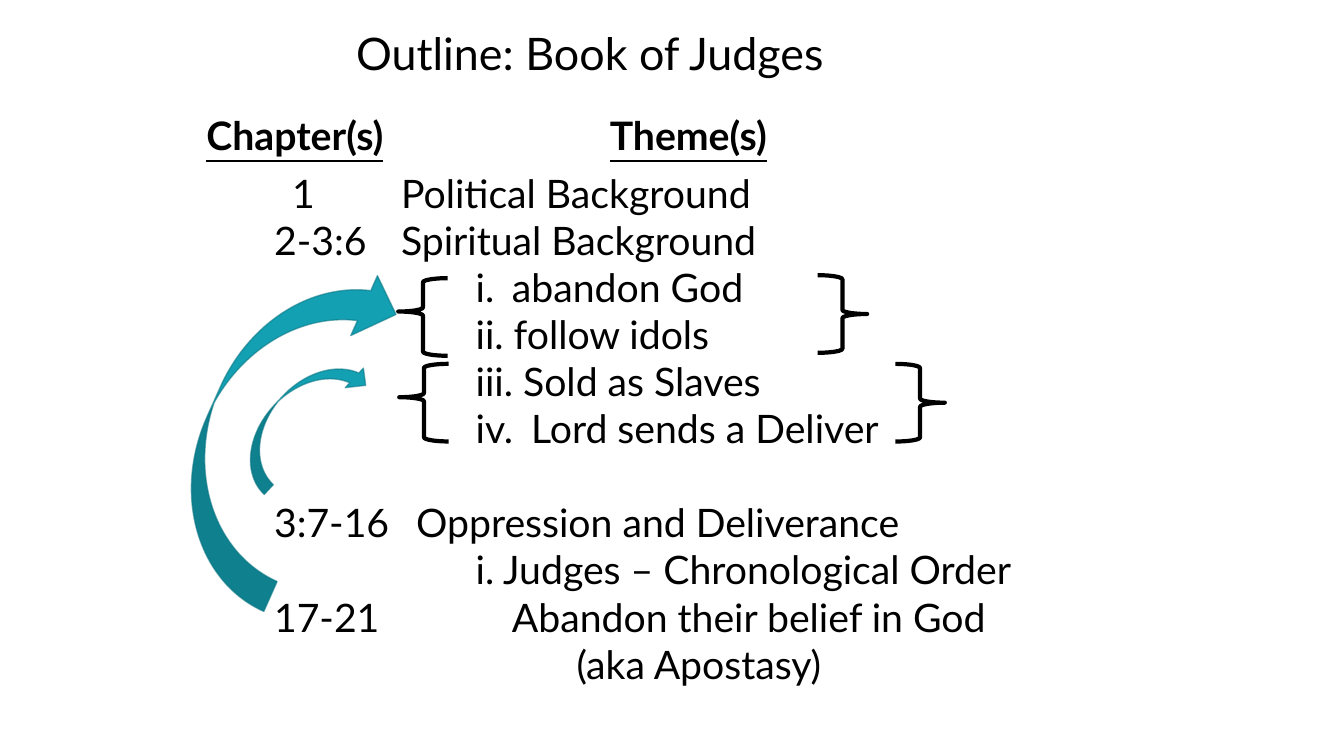
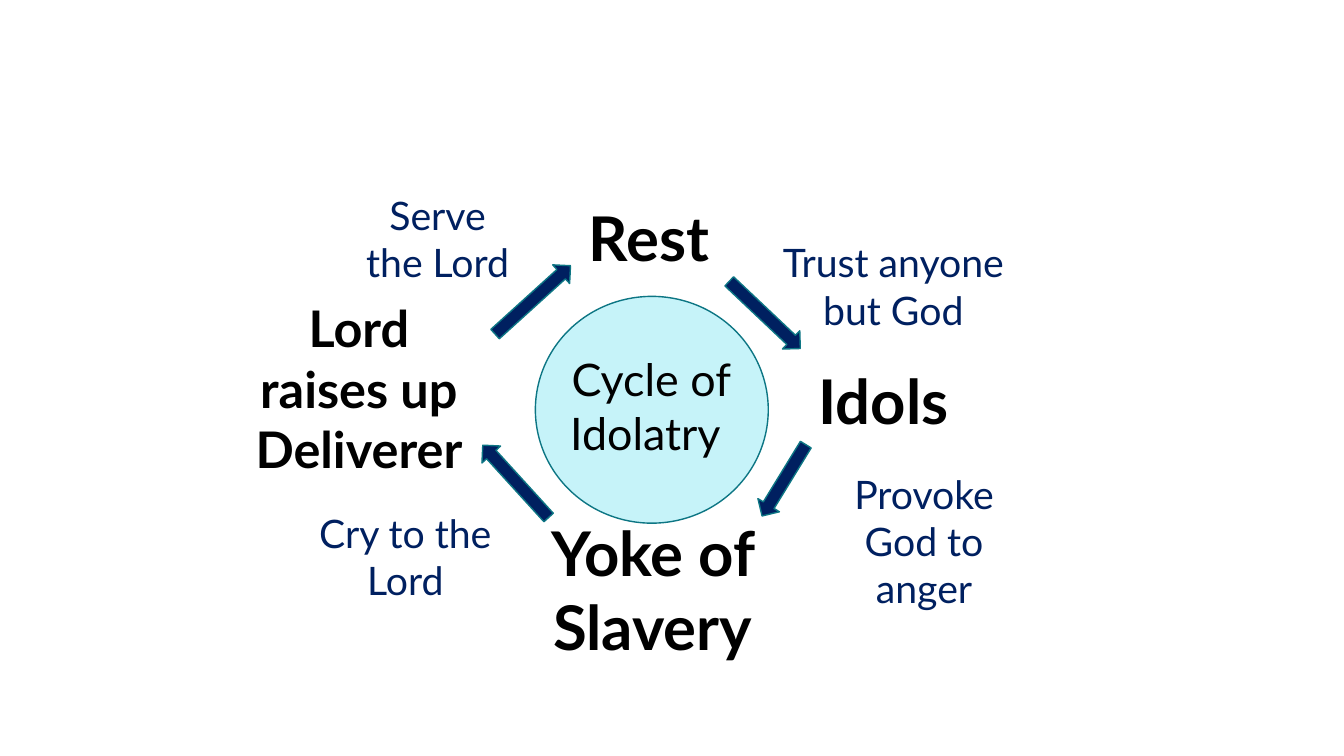
"""Build a two-slide deck on the Book of Judges."""
from dataclasses import dataclass

from lxml import etree
from pptx import Presentation
from pptx.dml.color import RGBColor
from pptx.enum.shapes import MSO_SHAPE
from pptx.enum.text import MSO_AUTO_SIZE, PP_ALIGN
from pptx.oxml.ns import qn
from pptx.util import Inches, Pt

FONT = "Lato"
BLACK, NAVY, TEAL, EDGE, PALE = "000000", "002060", "12A0B2", "0D7684", "C6F3F9"
LINE_HEIGHT = 33.6
LEFT, CENTER, RIGHT = PP_ALIGN.LEFT, PP_ALIGN.CENTER, PP_ALIGN.RIGHT


@dataclass
class Label:
    """A text box with one text style."""
    text: str
    left: float
    top: float
    width: float
    height: float
    size: int = 28
    color: str = BLACK
    bold: bool = False
    align: PP_ALIGN = CENTER


@dataclass
class Figure:
    """A preset shape with its place, turn and adjustments."""
    kind: MSO_SHAPE
    left: float
    top: float
    width: float
    height: float
    turn: float = 0
    adjust: tuple[float, ...] = ()


@dataclass
class Row:
    """An outline line whose tabs reach the given stops."""
    text: str
    stops: tuple[float, ...]
    gap: float = 0


TITLE = Label("Outline: Book of Judges", 3.37, 0.21, 4.9, 0.64, 32, align=RIGHT)
HEADER = Label("Chapter(s)\tTheme(s)", 1.95, 1.06, 6.64, 0.57, bold=True, align=LEFT)
HEADER_STOP = 4.0
ROWS = [
    Row("\t1\tPolitical Background", (0.18, 1.26)),
    Row("2-3:6\tSpiritual Background", (1.26,)),
    Row("\ti.\tabandon God", (2, 2.36)),
    Row("\tii. follow idols", (2,)),
    Row("\tiii. Sold as Slaves", (2,)),
    Row("\tiv.\tLord sends a Deliver", (2, 2.55)),
    Row("3:7-16\tOppression and Deliverance", (1.41,), LINE_HEIGHT),
    Row("\ti. Judges – Chronological Order", (2,)),
    Row("17-21\tAbandon their belief in God", (2.36,)),
    Row("\t(aka Apostasy)", (3,)),
]
OUTLINE = Label("\n".join(row.text for row in ROWS), 2.62, 1.63, 8.43, 5.28, align=LEFT)
RETURN_ARROWS = [
    Figure(MSO_SHAPE.CURVED_DOWN_ARROW, 2.17, 3.87, 1.61, 0.53, 312.9),
    Figure(MSO_SHAPE.CURVED_DOWN_ARROW, 0.97, 3.53, 3.55, 1.3, 294),
]
BRACES = [
    Figure(MSO_SHAPE.LEFT_BRACE, left, top, 0.49, 0.77, turn, (0.083, tip))
    for left, top, turn, tip in [
        (3.96, 3.61, 0, 0.43), (3.95, 2.76, 0, 0.43),
        (8.11, 2.73, 180, 0.5), (8.88, 3.61, 180, 0.5),
    ]
]

HUB = Figure(MSO_SHAPE.OVAL, 5.31, 2.94, 2.31, 2.25)
STAGES = [
    Label("Cycle of\nIdolatry ", 5.31, 3.44, 2.04, 1.18, 32, align=RIGHT),
    Label("Rest", 5.74, 1.93, 1.46, 0.84, 44, bold=True, align=LEFT),
    Label("Idols", 8.02, 3.55, 1.76, 0.84, 44, bold=True, align=LEFT),
    Label("Yoke of Slavery", 5.24, 5.06, 2.47, 1.58, 44, bold=True),
    Label("Lord raises up Deliverer", 2.3, 2.9, 2.52, 1.92, 36, bold=True),
]
STEPS = [
    Label("Trust anyone\nbut God", 7.57, 2.32, 2.58, 1.04, color=NAVY),
    Label("Provoke God to anger", 7.98, 4.62, 2.37, 1.04, color=NAVY),
    Label("Cry to the Lord", 2.73, 5, 2.58, 1.04, color=NAVY),
    Label("Serve\nthe Lord", 3.05, 1.85, 2.58, 1.04, color=NAVY),
]
CYCLE_ARROWS = [
    Figure(MSO_SHAPE.RIGHT_ARROW, left, top, width, 0.25, turn)
    for left, top, width, turn in [
        (7.1, 3, 0.97, 43.4), (7.36, 4.64, 0.83, 121.5),
        (4.63, 4.65, 0.97, 227.7), (4.78, 2.85, 1.01, 317.8),
    ]
]


def rgb(value: str) -> RGBColor:
    """Turn a hex string into a colour."""
    return RGBColor.from_string(value)


def place(item: Label | Figure) -> list[int]:
    """Give the left, top, width and height as lengths."""
    return [Inches(n) for n in (item.left, item.top, item.width, item.height)]


def format_run(run, label: Label) -> None:
    """Apply the style of a label to one run."""
    run.font.name = FONT
    run.font.size = Pt(label.size)
    run.font.bold = label.bold
    run.font.color.rgb = rgb(label.color)


def add_label(page, label: Label):
    """Draw a label and return its paragraphs."""
    frame = page.shapes.add_textbox(*place(label)).text_frame
    frame.word_wrap = True
    frame.auto_size = MSO_AUTO_SIZE.SHAPE_TO_FIT_TEXT
    frame.text = label.text
    for para in frame.paragraphs:
        para.alignment = label.align
        for run in para.runs:
            format_run(run, label)
    return frame.paragraphs


def set_stops(para, stops: tuple[float, ...]) -> None:
    """Add left tab stops to a paragraph."""
    tabs = etree.SubElement(para._p.get_or_add_pPr(), qn("a:tabLst"))
    for stop in stops:
        etree.SubElement(tabs, qn("a:tab"), pos=str(Inches(stop)), algn="l")


def add_figure(page, figure: Figure, fill: str | None, line: str, weight: float,
               opacity: int = 100) -> None:
    """Draw a preset shape with its fill and outline."""
    shape = page.shapes.add_shape(figure.kind, *place(figure))
    shape.shadow.inherit = False
    shape.rotation = figure.turn
    for index, value in enumerate(figure.adjust):
        shape.adjustments[index] = value
    if fill:
        shape.fill.solid()
        shape.fill.fore_color.rgb = rgb(fill)
    else:
        shape.fill.background()
    shape.line.color.rgb = rgb(line)
    shape.line.width = Pt(weight)
    if opacity < 100:
        color = shape.line._ln.find(".//" + qn("a:srgbClr"))
        etree.SubElement(color, qn("a:alpha"), val=str(opacity * 1000))


def add_header(page) -> None:
    """Draw the column heads, underlining only the words."""
    para = add_label(page, HEADER)[0]
    para.clear()
    for piece in HEADER.text.partition("\t"):
        run = para.add_run()
        run.text = piece
        format_run(run, HEADER)
        run.font.underline = piece != "\t"
    set_stops(para, (HEADER_STOP,))


def build_outline(page) -> None:
    """Draw the outline of the book."""
    add_header(page)
    for para, row in zip(add_label(page, OUTLINE), ROWS):
        set_stops(para, row.stops)
        para.space_before = Pt(row.gap)
    add_label(page, TITLE)
    for arrow in RETURN_ARROWS:
        add_figure(page, arrow, TEAL, EDGE, 1, 56)
    for brace in BRACES:
        add_figure(page, brace, None, BLACK, 3)


def build_cycle(page) -> None:
    """Draw the cycle of idolatry."""
    add_figure(page, HUB, PALE, EDGE, 1)
    for arrow in CYCLE_ARROWS:
        add_figure(page, arrow, NAVY, EDGE, 1)
    for label in STAGES + STEPS:
        add_label(page, label)


def main() -> None:
    """Build and save the deck."""
    deck = Presentation()
    deck.slide_width, deck.slide_height = Inches(13.33), Inches(7.5)
    for build in (build_outline, build_cycle):
        build(deck.slides.add_slide(deck.slide_layouts[6]))
    deck.save("out.pptx")


if __name__ == "__main__":
    main()
